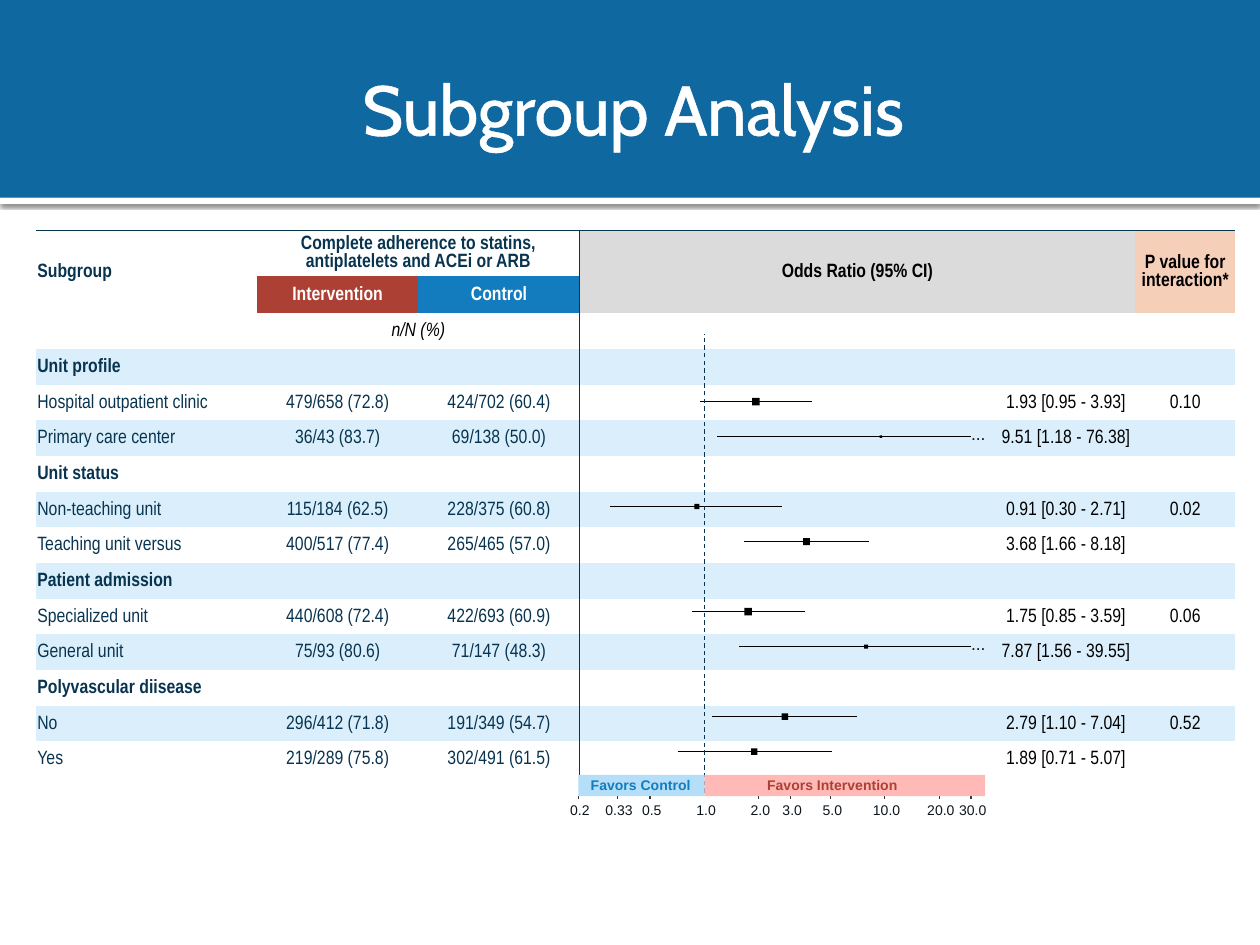
from math import log

from lxml.etree import SubElement
from pptx import Presentation
from pptx.dml.color import RGBColor
from pptx.enum.dml import MSO_LINE
from pptx.enum.shapes import MSO_CONNECTOR, MSO_SHAPE
from pptx.enum.text import MSO_ANCHOR, MSO_AUTO_SIZE, PP_ALIGN
from pptx.oxml.ns import qn
from pptx.util import Pt

WHITE = RGBColor(0xFF, 0xFF, 0xFF)
BLACK = RGBColor(0, 0, 0)
NAVY = RGBColor(0x08, 0x34, 0x50)
BANNER = RGBColor(0x0F, 0x68, 0x9F)
RED = RGBColor(0xAD, 0x40, 0x35)
BLUE = RGBColor(0x12, 0x7C, 0xBE)
GRAY = RGBColor(0xDB, 0xDB, 0xDB)
PEACH = RGBColor(0xF6, 0xCF, 0xB9)
STRIPE = RGBColor(0xDA, 0xEF, 0xFB)
PINK = RGBColor(0xFF, 0xB9, 0xB7)
SKY = RGBColor(0xB5, 0xDE, 0xF8)
INK = RGBColor(0x0D, 0x16, 0x1D)
TICK = RGBColor(0x33, 0x33, 0x33)

HEADERS = [
    (0, 0, 1, 0, "Subgroup", NAVY, None),
    (0, 1, 0, 2, "Complete adherence to statins, antiplatelets and ACEi or ARB", NAVY, None),
    (0, 3, 1, 4, "Odds Ratio (95% CI)", BLACK, GRAY),
    (0, 5, 1, 5, "P value for interaction*", BLACK, PEACH),
    (1, 1, 1, 1, "Intervention", WHITE, RED),
    (1, 2, 1, 2, "Control", WHITE, BLUE),
    (2, 1, 2, 2, "n/N (%)", BLACK, None),
]
SUBGROUPS = [
    ("Unit profile",),
    ("Hospital outpatient clinic", "479/658 (72.8)", "424/702 (60.4)", (1.93, 0.95, 3.93), "0.10", 4.3),
    ("Primary care center", "36/43 (83.7)", "69/138 (50.0)", (9.51, 1.18, 76.38), "", 1.5),
    ("Unit status",),
    ("Non-teaching unit", "115/184 (62.5)", "228/375 (60.8)", (0.91, 0.30, 2.71), "0.02", 3),
    ("Teaching unit versus", "400/517 (77.4)", "265/465 (57.0)", (3.68, 1.66, 8.18), "", 4),
    ("Patient admission",),
    ("Specialized unit", "440/608 (72.4)", "422/693 (60.9)", (1.75, 0.85, 3.59), "0.06", 4.3),
    ("General unit", "75/93 (80.6)", "71/147 (48.3)", (7.87, 1.56, 39.55), "", 2.4),
    ("Polyvascular diisease",),
    ("No", "296/412 (71.8)", "191/349 (54.7)", (2.79, 1.10, 7.04), "0.52", 3.7),
    ("Yes", "219/289 (75.8)", "302/491 (61.5)", (1.89, 0.71, 5.07), "", 3.7),
]
SCALE = ["0.2", "0.33", "0.5", "1.0", "2.0", "3.0", "5.0", "10.0", "20.0", "30.0"]
FAVORS = [
    ("Favors Intervention", 402.5, 160.5, 431.3, 117.4, PINK, RED),
    ("Favors Control", 330.5, 72, 330.5, 76.3, SKY, BLUE),
]

COLUMN_WIDTHS = [126.3, 92.2, 92.2, 238.3, 79.2, 57.1]
TABLE_LEFT, TABLE_TOP = 20.6, 131.7
HEADER_HEIGHT, ROW_HEIGHT = 26, 20.4
FIRST_DATA_ROW = 3
UNITY_X, POINTS_PER_LOG = 402.5, 44.8
PLOT_TOP, PLOT_PITCH = 229.5, 20
SCALE_LIMIT = 30


def ratio_x(ratio):
    return UNITY_X + POINTS_PER_LOG * log(ratio)


def write(frame, text, color, align=PP_ALIGN.LEFT, **formats):
    paragraph = frame.paragraphs[0]
    paragraph.alignment = align
    run = paragraph.add_run()
    run.text = text
    run.font.color.rgb = color
    for name, value in formats.items():
        setattr(run.font, name, value)
    return run


def set_margins(target, *margins):
    for side, value in zip(("left", "top", "right", "bottom"), margins):
        setattr(target, f"margin_{side}", Pt(value))


def add_box(slide, left, top, width, height, color):
    shape = slide.shapes.add_shape(MSO_SHAPE.RECTANGLE, Pt(left), Pt(top), Pt(width), Pt(height))
    shape.shadow.inherit = False
    shape.fill.solid()
    shape.fill.fore_color.rgb = color
    shape.line.fill.background()
    return shape


def add_line(slide, x1, y1, x2, y2, color, dash=None):
    line = slide.shapes.add_connector(MSO_CONNECTOR.STRAIGHT, Pt(x1), Pt(y1), Pt(x2), Pt(y2))
    line.line.color.rgb = color
    line.line.width = Pt(0.63)
    if dash:
        line.line.dash_style = dash
    SubElement(line._element.spPr, qn("a:effectLst"))


def add_label(slide, left, top, width, height, text, color, size, align=PP_ALIGN.LEFT,
              margins=(0, 0, 0, 0), wrap=False, bold=False):
    box = slide.shapes.add_textbox(Pt(left), Pt(top), Pt(width), Pt(height))
    frame = box.text_frame
    frame.word_wrap = wrap
    frame.auto_size = MSO_AUTO_SIZE.SHAPE_TO_FIT_TEXT
    set_margins(frame, *margins)
    write(frame, text, color, align, size=Pt(size), name="Arial", bold=bold)


def add_solid_line(parent, tag, width, color):
    line = SubElement(parent, qn(tag), w=str(Pt(width)))
    fill = SubElement(line, qn("a:solidFill"))
    SubElement(fill, qn("a:srgbClr"), val=str(color))
    return line


def set_borders(cell, visible_sides):
    properties = cell._tc.get_or_add_tcPr()
    fill = properties.find(qn("a:solidFill"))
    for side in "LRTB":
        if side in visible_sides:
            add_solid_line(properties, f"a:ln{side}", 1, NAVY)
        else:
            SubElement(SubElement(properties, qn(f"a:ln{side}")), qn("a:noFill"))
    if fill is not None:
        properties.append(fill)


def fill_cell(cell, text, color, align, fill=None, **formats):
    cell.vertical_anchor = MSO_ANCHOR.MIDDLE
    set_margins(cell, 0.75, 0.75, 0.75, 0)
    if fill:
        cell.fill.solid()
        cell.fill.fore_color.rgb = fill
    if text:
        write(cell.text_frame, text, color, align, size=Pt(11), name="Arial Narrow", **formats)
    else:
        SubElement(cell.text_frame.paragraphs[0]._p, qn("a:endParaRPr"), sz="1100")


def add_banner(slide):
    strip = add_box(slide, 0, 113, 720, 3.6, WHITE)
    effects = strip._element.spPr.find(qn("a:effectLst"))
    shadow = SubElement(effects, qn("a:outerShdw"), blurRad=str(Pt(2.5)), dist=str(Pt(0.8)), dir="5400000")
    color = SubElement(shadow, qn("a:srgbClr"), val=str(BLACK))
    SubElement(color, qn("a:alpha"), val="60000")
    add_box(slide, 0, 0, 720, 113, BANNER)
    title = slide.shapes.title
    slide.shapes._spTree.append(title._element)
    for name, value in {"left": 36, "top": 12.2, "width": 648, "height": 98.6}.items():
        setattr(title, name, Pt(value))
    frame = title.text_frame
    frame.auto_size = MSO_AUTO_SIZE.NONE
    frame.vertical_anchor = MSO_ANCHOR.MIDDLE
    set_margins(frame, 7.2, 3.6, 3.6, 3.6)
    run = write(frame, "Subgroup Analysis", WHITE, PP_ALIGN.CENTER, size=Pt(40), name="Cabin")
    properties = run._r.get_or_add_rPr()
    properties.insert(0, add_solid_line(properties, "a:ln", 1.45, WHITE))


def add_subgroup_table(slide):
    row_count = FIRST_DATA_ROW + len(SUBGROUPS)
    heights = [HEADER_HEIGHT] + [ROW_HEIGHT] * (row_count - 1)
    table = slide.shapes.add_table(row_count, len(COLUMN_WIDTHS), Pt(TABLE_LEFT), Pt(TABLE_TOP),
                                   Pt(sum(COLUMN_WIDTHS)), Pt(sum(heights))).table
    table.first_row = table.horz_banding = False
    table._tbl.tblPr.find(qn("a:tableStyleId")).text = "{2D5ABB26-0587-4C30-8999-92F81FD0307C}"
    for column, width in zip(table.columns, COLUMN_WIDTHS):
        column.width = Pt(width)
    for row, height in zip(table.rows, heights):
        row.height = Pt(height)

    contents = {(row, column): ("", NAVY, None) for row in range(FIRST_DATA_ROW) for column in range(6)}
    for top, left, bottom, right, text, color, fill in HEADERS:
        contents[top, left] = (text, color, fill)
        if (top, left) != (bottom, right):
            table.cell(top, left).merge(table.cell(bottom, right))
    for (row, column), (text, color, fill) in contents.items():
        align = PP_ALIGN.CENTER if column else PP_ALIGN.LEFT
        units = row == 2
        fill_cell(table.cell(row, column), text, color, align, fill, bold=not units, italic=units)

    for index, (label, *values) in enumerate(SUBGROUPS):
        texts = [label] + [""] * 5
        if values:
            intervention, control, odds, p_value, _ = values
            texts[1:] = [intervention, control, "", "{:.2f} [{:.2f} - {:.2f}]".format(*odds), p_value]
        for column, text in enumerate(texts):
            fill_cell(table.cell(index + FIRST_DATA_ROW, column), text, BLACK if column > 3 else NAVY,
                      PP_ALIGN.CENTER if column else PP_ALIGN.LEFT,
                      WHITE if index % 2 else STRIPE, bold=not values)

    for row in range(row_count):
        for column in range(6):
            cell = table.cell(row, column)
            sides = "T" if row == 0 else ""
            if column == 2 or (column == 1 and cell.is_merge_origin):
                sides += "R"
            elif column == 3:
                sides += "L"
            set_borders(cell, sides)


def add_forest_plot(slide):
    for index, (_, *values) in enumerate(SUBGROUPS[1:]):
        if not values:
            continue
        (odds, low, high), size = values[2], values[4]
        y = PLOT_TOP + index * PLOT_PITCH
        add_box(slide, ratio_x(odds) - size / 2, y - size / 2, size, size, BLACK)
        add_line(slide, ratio_x(low), y, ratio_x(min(high, SCALE_LIMIT)), y, BLACK)
        if high > SCALE_LIMIT:
            add_label(slide, ratio_x(SCALE_LIMIT), y - 8, 8.6, 12.2, "...", INK, 10)
    add_line(slide, UNITY_X, 453, UNITY_X, 190.8, NAVY, MSO_LINE.DASH)
    for text in SCALE:
        x = ratio_x(float(text))
        if x != UNITY_X:
            add_line(slide, x, 456.5, x, 455, TICK)
        width = 4.5 * len(text) - 1.5
        add_label(slide, x + 1 - width / 2, 458, width, 9.4, text, INK, 8, PP_ALIGN.CENTER)
    for text, left, width, text_left, text_width, fill, color in FAVORS:
        add_box(slide, left, 442.8, width, 12.2, fill)
        add_label(slide, text_left, 440, text_width, 17, text, color, 8,
                  margins=(7.2, 3.6, 7.2, 3.6), wrap=True, bold=True)


def main():
    presentation = Presentation()
    presentation.slide_width, presentation.slide_height = Pt(720), Pt(540)
    slide = presentation.slides.add_slide(presentation.slide_layouts[5])
    add_banner(slide)
    add_subgroup_table(slide)
    add_forest_plot(slide)
    presentation.save("out.pptx")


if __name__ == "__main__":
    main()
